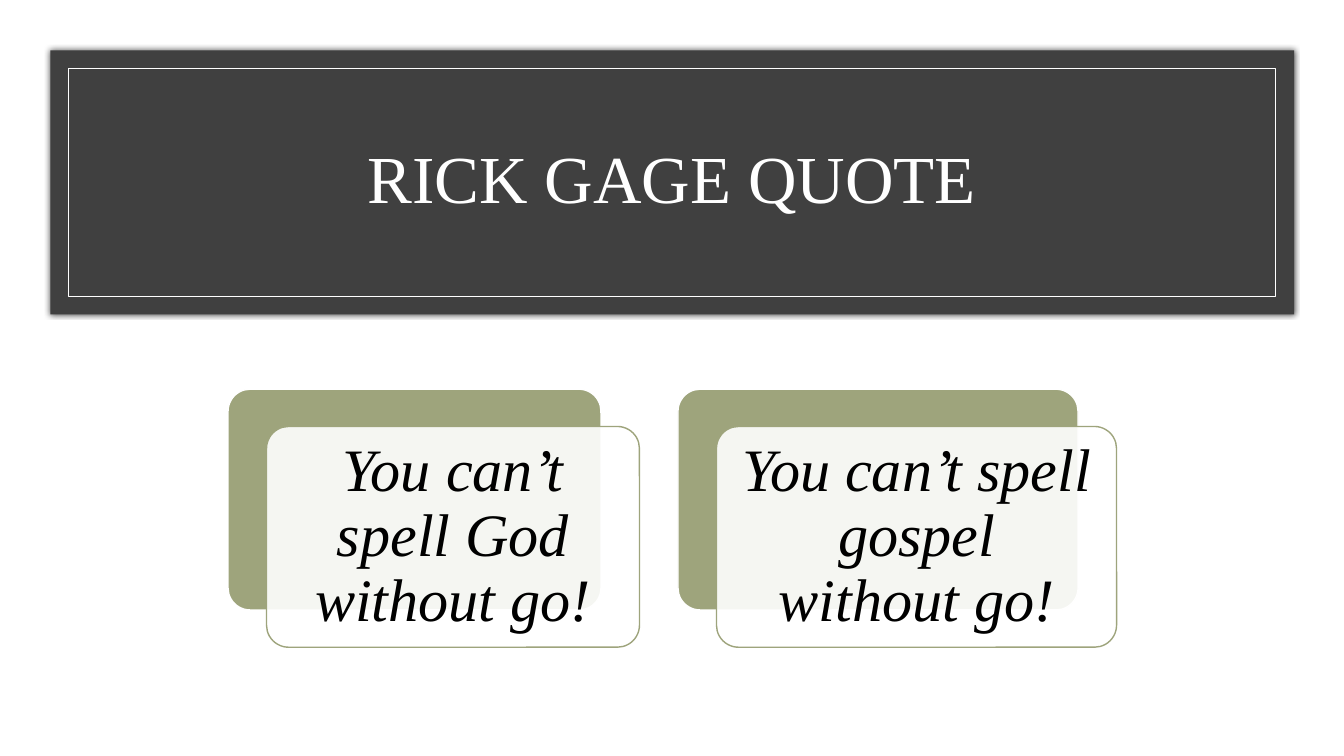
from lxml import etree
from pptx import Presentation
from pptx.dml.color import RGBColor
from pptx.enum.shapes import MSO_SHAPE as Preset
from pptx.enum.text import MSO_ANCHOR as Anchor, MSO_AUTO_SIZE as AutoSize, PP_ALIGN as Align
from pptx.oxml import parse_xml
from pptx.oxml.ns import nsdecls, qn
from pptx.util import Pt

WHITE = RGBColor(0xFF, 0xFF, 0xFF)
BLACK = RGBColor(0x00, 0x00, 0x00)
CHARCOAL = RGBColor(0x40, 0x40, 0x40)
SAGE = RGBColor(0x9E, 0xA4, 0x7C)

CARD_LEFT, CARD_TOP, CARD_HEIGHT = 162.9, 278, 157.7
OFFSET_X, OFFSET_Y = 27.5, 26.6
QUOTES = [
    ("You can’t spell God without go!", 266.4),
    ("You can’t spell gospel without go!", 285.8),
]


class QuoteSlide:
    font_name = "Times New Roman"

    def __init__(self, presentation):
        self.slide = presentation.slides.add_slide(presentation.slide_layouts[5])
        self.slide.background.fill.solid()
        self.slide.background.fill.fore_color.rgb = WHITE

    def box(self, preset, left, top, width, height, fill=None, line=None, line_width=1):
        shape = self.slide.shapes.add_shape(preset, Pt(left), Pt(top), Pt(width), Pt(height))
        shape.shadow.inherit = False
        if fill is None:
            shape.fill.background()
        else:
            shape.fill.solid()
            shape.fill.fore_color.rgb = fill
        if line is None:
            shape.line.fill.background()
        else:
            shape.line.color.rgb = line
            shape.line.width = Pt(line_width)
        return shape

    def glow(self, shape):
        """Give the shape a soft black shadow on all sides."""
        effects = shape.element.spPr.find(qn("a:effectLst"))
        effects.append(parse_xml(
            f'<a:outerShdw {nsdecls("a")} blurRad="{Pt(4)}" dist="0" dir="0">'
            '<a:srgbClr val="000000"><a:alpha val="66000"/></a:srgbClr></a:outerShdw>'))

    def set_text(self, shape, text, size, color, italic=False, inset=None):
        frame = shape.text_frame
        frame.text = text
        frame.word_wrap = True
        frame.auto_size = AutoSize.NONE
        frame.vertical_anchor = Anchor.MIDDLE
        if inset is not None:
            frame.margin_left = frame.margin_right = Pt(inset)
            frame.margin_top = frame.margin_bottom = Pt(inset)
        paragraph = frame.paragraphs[0]
        paragraph.alignment = Align.CENTER
        paragraph.line_spacing = 0.9
        font = paragraph.font
        font.name, font.size, font.italic = self.font_name, Pt(size), italic
        font.color.rgb = color

    def title(self, text, left, top, width, height):
        title = self.slide.shapes.title
        title.left, title.top, title.width, title.height = map(Pt, (left, top, width, height))
        self.set_text(title, text, 48, WHITE)
        title.element.getparent().append(title.element)  # in front of the banner

    def card(self, text, left, width):
        """Add a sage panel with a translucent quote panel set off over it."""
        back = self.box(Preset.ROUNDED_RECTANGLE, left, CARD_TOP, width, CARD_HEIGHT, SAGE, WHITE)
        front = self.box(Preset.ROUNDED_RECTANGLE, left + OFFSET_X, CARD_TOP + OFFSET_Y,
                         width, CARD_HEIGHT, WHITE, SAGE)
        for panel in (back, front):
            panel.adjustments[0] = 0.1
        color = front.element.spPr.find(qn("a:solidFill"))[0]
        etree.SubElement(color, qn("a:alpha"), val="90000")
        self.set_text(front, text, 43, BLACK, italic=True, inset=13)


def main():
    presentation = Presentation()
    presentation.slide_width, presentation.slide_height = Pt(960), Pt(540)
    page = QuoteSlide(presentation)

    banner = page.box(Preset.RECTANGLE, 36, 36, 888.5, 188.6, CHARCOAL)
    page.glow(banner)
    page.box(Preset.RECTANGLE, 48.6, 49, 862.6, 162.7, line=WHITE, line_width=0.5)
    page.title("RICK GAGE QUOTE", 84, 76, 792, 108)

    left = CARD_LEFT
    for quote, width in QUOTES:
        page.card(quote, left, width)
        left += width + 2 * OFFSET_X

    presentation.save("out.pptx")


if __name__ == "__main__":
    main()
